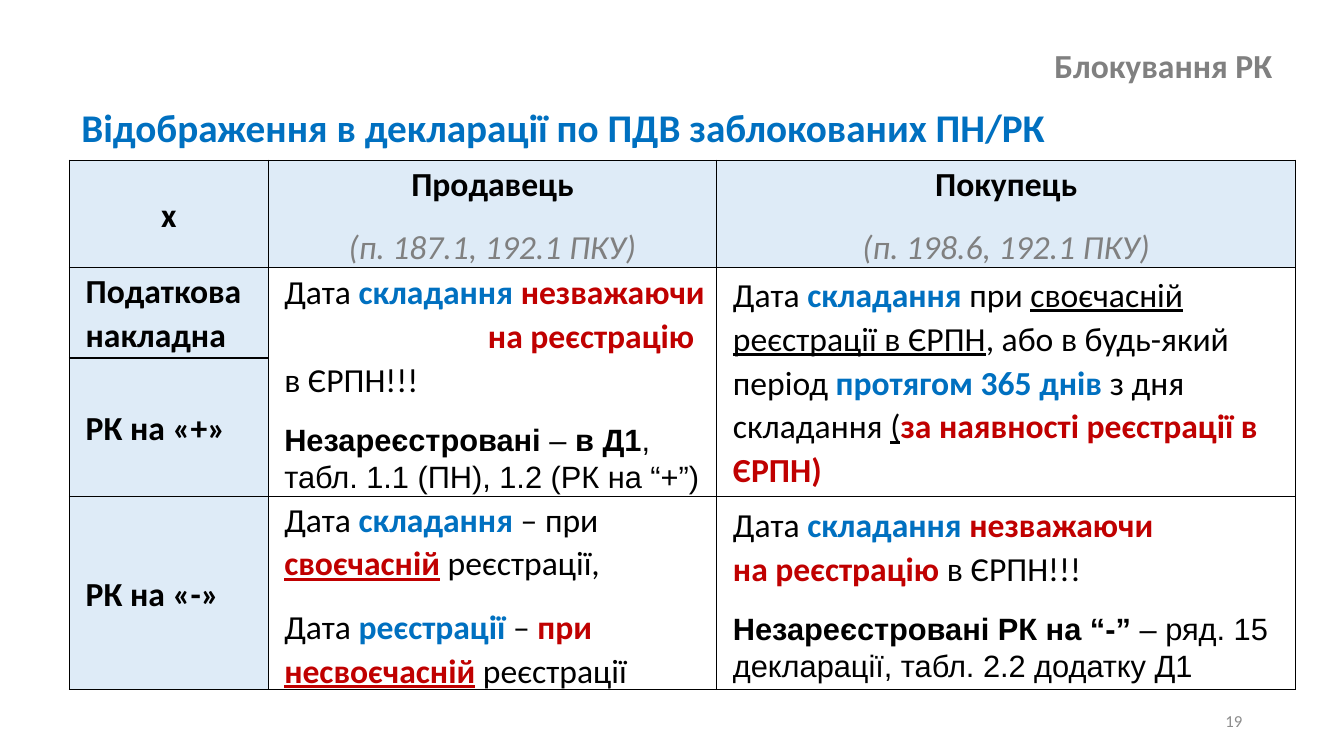
from lxml import etree
from pptx import Presentation
from pptx.dml.color import RGBColor
from pptx.enum.text import MSO_ANCHOR, PP_ALIGN
from pptx.oxml.ns import qn
from pptx.util import Inches, Pt

BLACK = RGBColor(0x00, 0x00, 0x00)
WHITE = RGBColor(0xFF, 0xFF, 0xFF)
BLUE = RGBColor(0x00, 0x70, 0xC0)
RED = RGBColor(0xC0, 0x00, 0x00)
GRAY = RGBColor(0x80, 0x80, 0x80)
LIGHT_GRAY = RGBColor(0x8C, 0x8C, 0x8C)
PALE_BLUE = RGBColor(0xDE, 0xEB, 0xF7)
MIDDLE, TOP = MSO_ANCHOR.MIDDLE, MSO_ANCHOR.TOP
LEFT, CENTER, RIGHT = PP_ALIGN.LEFT, PP_ALIGN.CENTER, PP_ALIGN.RIGHT

PLAIN = {}
BOLD = {"bold": True}
UNDERLINED = {"underline": True}
BLUE_BOLD = {"bold": True, "color": BLUE}
RED_BOLD = {"bold": True, "color": RED}
RED_UNDERLINED = {"bold": True, "color": RED, "underline": True}
REFERENCE = {"italic": True, "color": GRAY}
NOTE = {"font": "Arial", "size": 22}
NOTE_BOLD = {**NOTE, "bold": True}

COLUMN_WIDTHS = (1.97, 4.45, 5.74)
ROW_HEIGHTS = (1.02, 0.9, 1.34, 1.91)

HEADERS = (
    [[("х", BOLD)]],
    [[("Продавець", BOLD)], [("(п. 187.1, 192.1 ПКУ)", REFERENCE)]],
    [[("Покупець", BOLD)], [("(п. 198.6, 192.1 ПКУ)", REFERENCE)]],
)
ROW_LABELS = ("Податкова накладна", "РК на «+»", "РК на «-»")
SELLER_INVOICE = [
    [("Дата ", PLAIN), ("складання ", BLUE_BOLD), ("незважаючи", RED_BOLD)],
    [("на реєстрацію", RED_BOLD)],
    [("в ЄРПН!!!", PLAIN)],
    [("Незареєстровані ", NOTE_BOLD), ("– ", NOTE), ("в Д1", NOTE_BOLD),
     (", табл. 1.1 (ПН), 1.2 (РК на “+”)", NOTE)],
]
BUYER_INVOICE = [
    [("Дата", PLAIN), (" складання ", BLUE_BOLD), ("при ", PLAIN),
     ("своєчасній реєстрації в ЄРПН", UNDERLINED),
     (", або в будь-який період ", PLAIN), ("протягом 365 днів ", BLUE_BOLD),
     ("з дня складання ", PLAIN), ("(", UNDERLINED),
     ("за наявності реєстрації в ЄРПН)", RED_BOLD)],
]
SELLER_MINUS = [
    [("Дата ", PLAIN), ("складання", BLUE_BOLD), (" – при ", PLAIN),
     ("своєчасній", RED_UNDERLINED), (" реєстрації,", PLAIN)],
    [("Дата ", PLAIN), ("реєстрації ", BLUE_BOLD), ("– ", PLAIN), ("при ", RED_BOLD),
     ("несвоєчасній", RED_UNDERLINED), (" реєстрації", PLAIN)],
]
BUYER_MINUS = [
    [("Дата ", PLAIN), ("складання ", BLUE_BOLD), ("незважаючи", RED_BOLD)],
    [("на реєстрацію ", RED_BOLD), ("в ЄРПН!!!", PLAIN)],
    [("Незареєстровані РК на “-”", NOTE_BOLD),
     (" – ряд. 15 декларації, табл. 2.2 додатку Д1", NOTE)],
]


class SlideBuilder:
    font = "Calibri"
    size = 24
    border_width = Pt(1)

    def __init__(self, presentation):
        self.slide = presentation.slides.add_slide(presentation.slide_layouts[6])

    def add_run(self, paragraph, text, style):
        run = paragraph.add_run()
        run.text = text
        run.font.name = style.get("font", self.font)
        run.font.size = Pt(style.get("size", self.size))
        run.font.bold = style.get("bold", False)
        run.font.italic = style.get("italic", False)
        run.font.underline = style.get("underline", False)
        run.font.color.rgb = style.get("color", BLACK)

    def add_text(self, box, text, style, align=LEFT, anchor=MIDDLE, line_spacing=1.0, before=0, wrap=True):
        shape = self.slide.shapes.add_textbox(*map(Inches, box))
        frame = shape.text_frame
        frame.word_wrap = wrap
        frame.vertical_anchor = anchor
        paragraph = frame.paragraphs[0]
        paragraph.alignment = align
        paragraph.line_spacing = line_spacing
        paragraph.space_before = Pt(before)
        self.add_run(paragraph, text, style)

    def add_table(self, left, top, widths, heights):
        frame = self.slide.shapes.add_table(
            len(heights), len(widths), Inches(left), Inches(top),
            Inches(sum(widths)), Inches(sum(heights)))
        table = frame.table
        table.first_row = False
        table.horz_banding = False
        for column, width in zip(table.columns, widths):
            column.width = Inches(width)
        for row, height in zip(table.rows, heights):
            row.height = Inches(height)
        for cell in table.iter_cells():
            self.style_cell(cell, WHITE)
        return table

    def style_cell(self, cell, color):
        cell.fill.solid()
        cell.fill.fore_color.rgb = color
        properties = cell._tc.get_or_add_tcPr()
        for position, side in enumerate(("lnL", "lnR", "lnT", "lnB")):
            line = etree.Element(qn(f"a:{side}"), w=str(self.border_width))
            fill = etree.SubElement(line, qn("a:solidFill"))
            etree.SubElement(fill, qn("a:srgbClr"), val=str(BLACK))
            properties.insert(position, line)

    def fill_cell(self, cell, paragraphs, color=WHITE, align=LEFT, joined=(), indents=None):
        cell.fill.fore_color.rgb = color
        cell.vertical_anchor = MIDDLE
        cell.margin_left = Inches(0.07 if align == CENTER else 0.16)
        cell.margin_right = Inches(0.07)
        cell.margin_top = Inches(0.01)
        cell.margin_bottom = Inches(0)
        frame = cell.text_frame
        for index, runs in enumerate(paragraphs):
            paragraph = frame.add_paragraph() if index else frame.paragraphs[0]
            paragraph.alignment = align
            paragraph.line_spacing = 1.07
            paragraph.space_before = Pt(0 if index in joined else 6)
            paragraph.space_after = Pt(0 if index + 1 in joined else 8)
            indent = (indents or {}).get(index)
            if indent:
                paragraph._p.get_or_add_pPr().set("marL", str(Inches(indent)))
            for text, style in runs:
                self.add_run(paragraph, text, style)


def main():
    presentation = Presentation()
    presentation.slide_width = Inches(13.33)
    presentation.slide_height = Inches(7.5)
    builder = SlideBuilder(presentation)

    builder.add_text((10.36, 0.4, 2.65, 0.54), "Блокування РК",
                     {"bold": True, "color": GRAY}, line_spacing=0.9)
    builder.add_text((9.42, 6.95, 3, 0.4), "19", {"size": 12, "color": LIGHT_GRAY}, align=RIGHT)
    builder.add_text((0.71, 0.88, 9.87, 0.63), "Відображення в декларації по ПДВ заблокованих ПН/РК",
                     {"size": 28, **BLUE_BOLD}, anchor=TOP, line_spacing=1.2, before=6, wrap=False)

    table = builder.add_table(0.69, 1.59, COLUMN_WIDTHS, ROW_HEIGHTS)
    for column in (1, 2):
        table.cell(1, column).merge(table.cell(2, column))
    for column, header in enumerate(HEADERS):
        builder.fill_cell(table.cell(0, column), header, PALE_BLUE, CENTER)
    for row, label in enumerate(ROW_LABELS, start=1):
        builder.fill_cell(table.cell(row, 0), [[(label, BOLD)]], PALE_BLUE)
    builder.fill_cell(table.cell(1, 1), SELLER_INVOICE, joined=(1, 2), indents={1: 2.02})
    builder.fill_cell(table.cell(1, 2), BUYER_INVOICE)
    builder.fill_cell(table.cell(3, 1), SELLER_MINUS)
    builder.fill_cell(table.cell(3, 2), BUYER_MINUS, joined=(1,))

    presentation.save("out.pptx")


if __name__ == "__main__":
    main()
